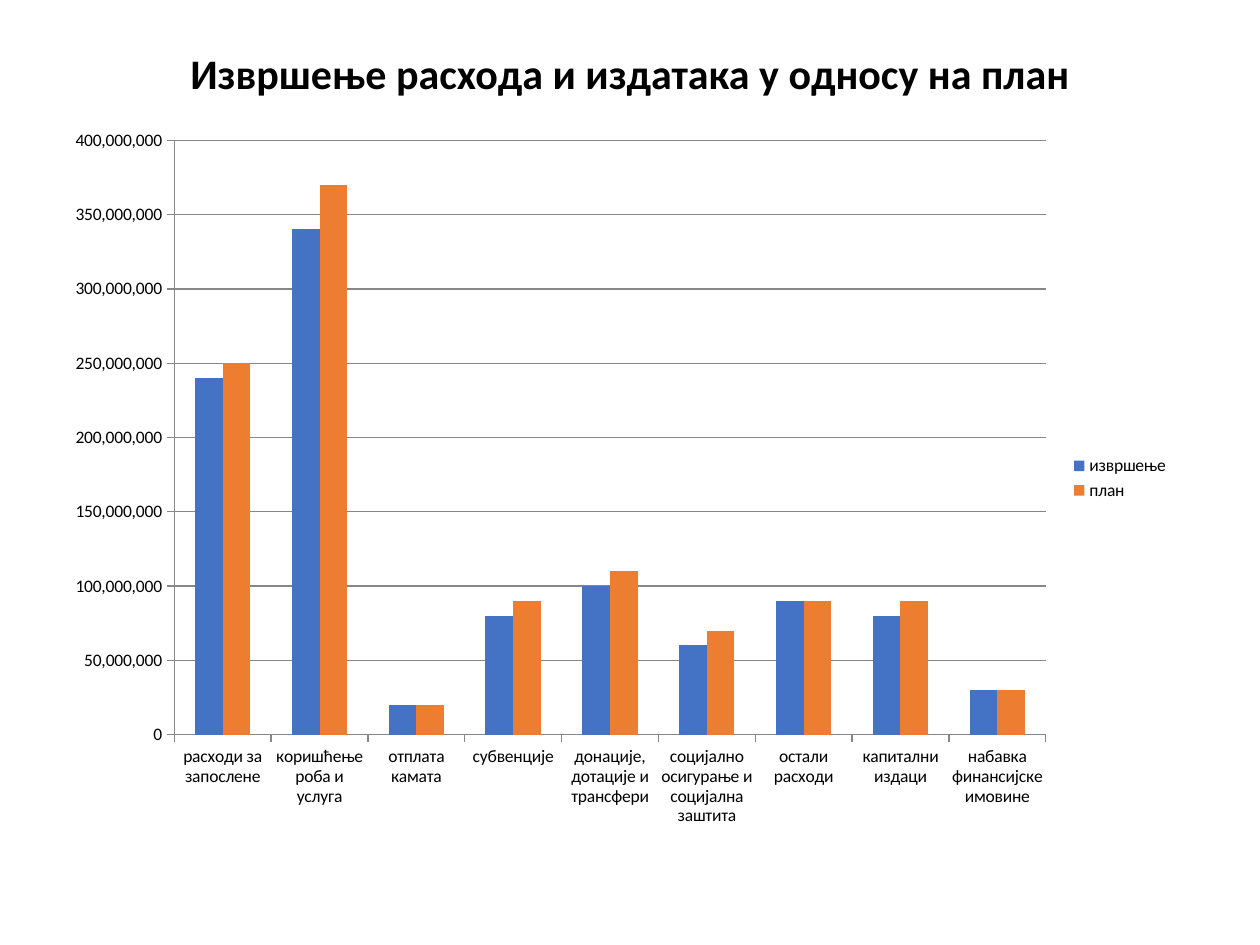
from typing import NamedTuple

from pptx import Presentation
from pptx.chart.data import CategoryChartData
from pptx.dml.color import RGBColor
from pptx.enum.chart import XL_CHART_TYPE, XL_LEGEND_POSITION, XL_TICK_MARK
from pptx.enum.text import MSO_ANCHOR, PP_ALIGN
from pptx.util import Inches, Pt

COLUMNS = XL_CHART_TYPE.COLUMN_CLUSTERED
LEGEND_RIGHT = XL_LEGEND_POSITION.RIGHT
TICK_OUT, TICK_NONE = XL_TICK_MARK.OUTSIDE, XL_TICK_MARK.NONE
BOTTOM, CENTER = MSO_ANCHOR.BOTTOM, PP_ALIGN.CENTER

FONT = "Calibri"
BLACK, GRAY = "000000", "878787"
MILLION = 1_000_000


class Series(NamedTuple):
    name: str
    color: str
    millions: tuple


CATEGORIES = (
    "расходи за запослене",
    "коришћење роба и услуга",
    "отплата камата",
    "субвенције",
    "донације, дотације и трансфери",
    "социјално осигурање и социјална заштита",
    "остали расходи",
    "капитални издаци",
    "набавка финансијске имовине",
)
SERIES = (
    Series("извршење", "4472C4", (240, 340, 20, 80, 100, 60, 90, 80, 30)),
    Series("план", "ED7D31", (250, 370, 20, 90, 110, 70, 90, 90, 30)),
)


def rgb(color: str) -> RGBColor:
    return RGBColor.from_string(color)


def style_font(font, size: float, bold: bool = False) -> None:
    font.name, font.size, font.bold = FONT, Pt(size), bold
    font.color.rgb = rgb(BLACK)


def add_title(s, text: str) -> None:
    box = s.shapes.add_textbox(Inches(0.3), Inches(0.25), Inches(9.4), Inches(0.58))
    tf = box.text_frame
    tf.word_wrap = True
    tf.vertical_anchor = BOTTOM
    p = tf.paragraphs[0]
    p.text = text
    p.alignment = CENTER
    p.line_spacing = 0.9
    style_font(p.font, 24, bold=True)


def add_spending_chart(s) -> None:
    data = CategoryChartData(number_format="#,##0")
    data.categories = CATEGORIES
    for series in SERIES:
        data.add_series(series.name, [v * MILLION for v in series.millions])
    chart = s.shapes.add_chart(
        COLUMNS, Inches(0.42), Inches(0.92), Inches(8.96), Inches(5.75), data
    ).chart
    style_font(chart.font, 10)
    chart.has_title = False
    chart.has_legend = True
    chart.legend.position = LEGEND_RIGHT
    chart.legend.include_in_layout = False

    plot = chart.plots[0]
    plot.gap_width = 150
    plot.overlap = 0
    plot.vary_by_categories = False
    for drawn, series in zip(plot.series, SERIES):
        drawn.format.fill.solid()
        drawn.format.fill.fore_color.rgb = rgb(series.color)

    for axis in (chart.category_axis, chart.value_axis):
        axis.major_tick_mark = TICK_OUT
        axis.minor_tick_mark = TICK_NONE
        axis.format.line.color.rgb = rgb(GRAY)
    values = chart.value_axis
    values.minimum_scale, values.maximum_scale = 0, 400 * MILLION
    values.major_unit = 50 * MILLION
    values.tick_labels.number_format = "#,##0"
    values.tick_labels.number_format_is_linked = False
    values.has_major_gridlines = True
    values.major_gridlines.format.line.color.rgb = rgb(GRAY)


def main() -> None:
    prs = Presentation()
    prs.slide_width, prs.slide_height = Inches(10), Inches(7.5)
    s = prs.slides.add_slide(prs.slide_layouts[6])
    add_title(s, "Извршење расхода и издатака у односу на план")
    add_spending_chart(s)
    prs.save("out.pptx")


if __name__ == "__main__":
    main()
